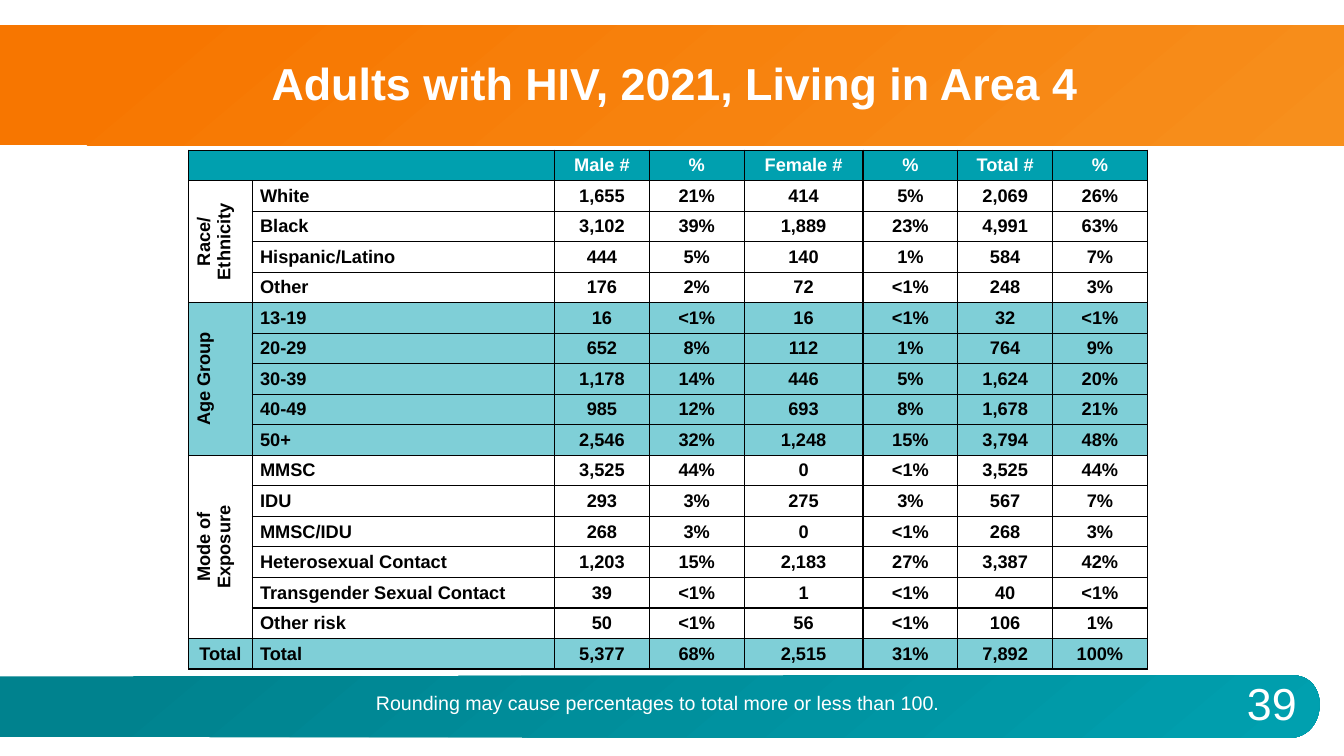
from pptx import Presentation as Deck
from pptx.dml.color import RGBColor as Color
from pptx.enum.shapes import MSO_SHAPE as Shape
from pptx.enum.text import MSO_ANCHOR as Anchor, PP_ALIGN as Align
from pptx.oxml import parse_xml
from pptx.oxml.ns import nsdecls
from pptx.util import Inches, Pt

WHITE, BLACK, TEAL, PALE = "FFFFFF", "000000", "00A0AF", "7FCFD7"
HEADS = ["Male #", "%", "Female #", "%", "Total #", "%"]
WIDTHS = [0.63, 3, 0.94, 0.94, 1.18, 0.94, 0.94, 0.94]

# Each group: label lines, fill, rows
GROUPS = [
    (["Race/", "Ethnicity"], WHITE, [
        ["White", "1,655", "21%", "414", "5%", "2,069", "26%"],
        ["Black", "3,102", "39%", "1,889", "23%", "4,991", "63%"],
        ["Hispanic/Latino", "444", "5%", "140", "1%", "584", "7%"],
        ["Other", "176", "2%", "72", "<1%", "248", "3%"]]),
    (["Age Group"], PALE, [
        ["13-19", "16", "<1%", "16", "<1%", "32", "<1%"],
        ["20-29", "652", "8%", "112", "1%", "764", "9%"],
        ["30-39", "1,178", "14%", "446", "5%", "1,624", "20%"],
        ["40-49", "985", "12%", "693", "8%", "1,678", "21%"],
        ["50+", "2,546", "32%", "1,248", "15%", "3,794", "48%"]]),
    (["Mode of", "Exposure"], WHITE, [
        ["MMSC", "3,525", "44%", "0", "<1%", "3,525", "44%"],
        ["IDU", "293", "3%", "275", "3%", "567", "7%"],
        ["MMSC/IDU", "268", "3%", "0", "<1%", "268", "3%"],
        ["Heterosexual Contact", "1,203", "15%", "2,183", "27%", "3,387", "42%"],
        ["Transgender Sexual Contact", "39", "<1%", "1", "<1%", "40", "<1%"],
        ["Other risk", "50", "<1%", "56", "<1%", "106", "1%"]]),
    (["Total"], PALE, [
        ["Total", "5,377", "68%", "2,515", "31%", "7,892", "100%"]]),
]


def tint(code):
    return Color.from_string(code)


def apply(item, form):
    for name, value in form.items():
        setattr(item, name, value)


def write(para, lines, size, color, bold=False, align=Align.CENTER):
    para.alignment = align
    for i, line in enumerate(lines):
        if i:
            para.add_line_break()
        run = para.add_run()
        run.text = line
        apply(run.font, {"name": "Arial", "size": Pt(size), "bold": bold})
        run.font.color.rgb = tint(color)


def add_text(slide, box, text, size, bold=False, anchor=Anchor.MIDDLE, space=1.0):
    frame = slide.shapes.add_textbox(*map(Inches, box)).text_frame
    apply(frame, {"word_wrap": True, "vertical_anchor": anchor})
    frame.paragraphs[0].line_spacing = space
    write(frame.paragraphs[0], [text], size, WHITE, bold)


def shade(shape, first, last):
    shape.shadow.inherit = False
    shape.line.fill.background()
    shape.fill.gradient()
    shape.fill.gradient_angle = 310
    for stop, place, code in zip(shape.fill.gradient_stops, (0.09, 1), (first, last)):
        stop.position = place
        stop.color.rgb = tint(code)


def curve(ends, steps=24):
    """Points along a cubic curve."""
    for i in range(1, steps + 1):
        t = i / steps
        parts = ((1 - t) ** 3, 3 * t * (1 - t) ** 2, 3 * t * t * (1 - t), t ** 3)
        yield tuple(Inches(sum(k * p[axis] for k, p in zip(parts, ends)))
                    for axis in (0, 1))


def add_foot(slide):
    ends = [(12.8, 6.7), (13.2, 6.68), (13.17, 7.31), (12.8, 7.32)]
    path = slide.shapes.build_freeform(Inches(12.8), Inches(6.7))
    points = list(curve(ends)) + [(0, Inches(7.31)), (0, Inches(6.71))]
    path.add_line_segments(points, close=True)
    shade(path.convert_to_shape(), "00828E", TEAL)


def fill_cell(cell, lines, fill, color=BLACK, align=Align.CENTER, turn=False):
    pad = 0.1 if turn else 0.08
    apply(cell, {"vertical_anchor": Anchor.MIDDLE,
                 "margin_left": Inches(pad), "margin_right": Inches(pad),
                 "margin_top": Inches(pad / 2), "margin_bottom": Inches(pad / 2)})
    props = cell._tc.get_or_add_tcPr()
    if turn:
        props.set("vert", "vert270")
    # Borders come before the fill
    for side in "LRTB":
        props.append(parse_xml(
            f'<a:ln{side} {nsdecls("a")} w="{Pt(0.85)}"><a:solidFill>'
            f'<a:srgbClr val="{BLACK}"/></a:solidFill></a:ln{side}>'))
    cell.fill.solid()
    cell.fill.fore_color.rgb = tint(fill)
    para = cell.text_frame.paragraphs[0]
    write(para, lines, 13, color, True, align)
    if not lines:
        # Keeps a blank cell from growing its row
        para._p.append(parse_xml(f'<a:endParaRPr {nsdecls("a")} sz="1300"/>'))


def add_grid(slide):
    count = 1 + sum(len(rows) for _, _, rows in GROUPS)
    frame = slide.shapes.add_table(count, len(WIDTHS), Inches(1.87), Inches(1.49),
                                   Inches(sum(WIDTHS)), Inches(5.15))
    grid = frame.table
    apply(grid, {"first_row": False, "horz_banding": False})
    for col, width in zip(grid.columns, WIDTHS):
        col.width = Inches(width)

    # Head row
    for c, head in enumerate(["", ""] + HEADS):
        fill_cell(grid.cell(0, c), [head] if head else [], TEAL, WHITE)
    grid.cell(0, 0).merge(grid.cell(0, 1))

    # Groups
    top = 1
    for label, fill, rows in GROUPS:
        tall = len(rows) > 1
        for r, row in enumerate(rows, top):
            fill_cell(grid.cell(r, 0), label if r == top else [], fill,
                      turn=tall and r == top)
            for c, text in enumerate(row, 1):
                fill_cell(grid.cell(r, c), [text], fill,
                          align=Align.LEFT if c == 1 else Align.CENTER)
        if tall:
            grid.cell(top, 0).merge(grid.cell(top + len(rows) - 1, 0))
        top += len(rows)


def main():
    deck = Deck()
    apply(deck, {"slide_width": Inches(13.33), "slide_height": Inches(7.5)})
    slide = deck.slides.add_slide(deck.slide_layouts[6])

    # Bands
    add_foot(slide)
    band = slide.shapes.add_shape(Shape.RECTANGLE, 0, Inches(0.25),
                                  Inches(13.33), Inches(1.19))
    shade(band, "F77600", "F78F1C")

    # Page number and title
    add_text(slide, (12.07, 6.68, 1.09, 0.59), "39", 32)
    add_text(slide, (0.74, 0.26, 11.91, 1.18),
             "Adults with HIV, 2021, Living in Area 4", 32, bold=True, space=0.9)

    # Table and note
    add_grid(slide)
    add_text(slide, (1.06, 6.81, 10.93, 0.34),
             "Rounding may cause percentages to total more or less than 100.",
             14, anchor=Anchor.TOP)
    deck.save("out.pptx")


if __name__ == "__main__":
    main()
